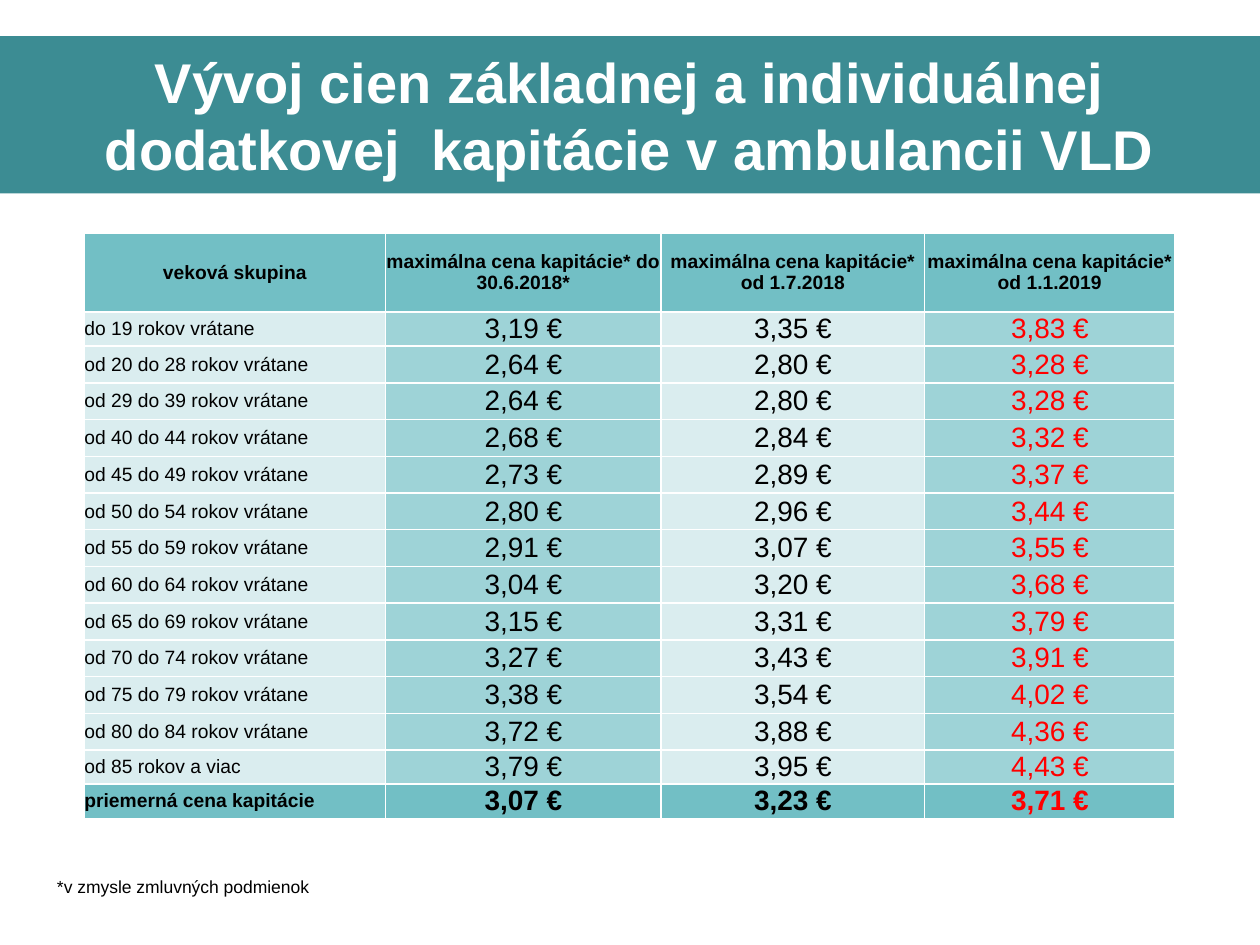
"""Build the slide on capitation prices by age group."""
from lxml import etree
from pptx import Presentation
from pptx.dml.color import RGBColor
from pptx.enum.text import MSO_ANCHOR, MSO_AUTO_SIZE, PP_ALIGN
from pptx.oxml.ns import qn
from pptx.util import Cm, Pt

LEFT, CENTER = PP_ALIGN.LEFT, PP_ALIGN.CENTER
MIDDLE = MSO_ANCHOR.MIDDLE
NO_FIT = MSO_AUTO_SIZE.NONE

TITLE = "Vývoj cien základnej a individuálnej dodatkovej  kapitácie v ambulancii VLD"
NOTE = "*v zmysle zmluvných podmienok"
HEAD = (
    "veková skupina",
    "maximálna cena kapitácie* do 30.6.2018*",
    "maximálna cena kapitácie* od 1.7.2018",
    "maximálna cena kapitácie* od 1.1.2019",
)
PRICES = [
    ("do 19 rokov vrátane", "3,19 €", "3,35 €", "3,83 €"),
    ("od 20 do 28 rokov vrátane", "2,64 €", "2,80 €", "3,28 €"),
    ("od 29 do 39 rokov vrátane", "2,64 €", "2,80 €", "3,28 €"),
    ("od 40 do 44 rokov vrátane", "2,68 €", "2,84 €", "3,32 €"),
    ("od 45 do 49 rokov vrátane", "2,73 €", "2,89 €", "3,37 €"),
    ("od 50 do 54 rokov vrátane", "2,80 €", "2,96 €", "3,44 €"),
    ("od 55 do 59 rokov vrátane", "2,91 €", "3,07 €", "3,55 €"),
    ("od 60 do 64 rokov vrátane", "3,04 €", "3,20 €", "3,68 €"),
    ("od 65 do 69 rokov vrátane", "3,15 €", "3,31 €", "3,79 €"),
    ("od 70 do 74 rokov vrátane", "3,27 €", "3,43 €", "3,91 €"),
    ("od 75 do 79 rokov vrátane", "3,38 €", "3,54 €", "4,02 €"),
    ("od 80 do 84 rokov vrátane", "3,72 €", "3,88 €", "4,36 €"),
    ("od 85 rokov a viac", "3,79 €", "3,95 €", "4,43 €"),
]
MEAN = ("priemerná cena kapitácie", "3,07 €", "3,23 €", "3,71 €")
ROWS = [HEAD, *PRICES, MEAN]

WIDTHS = (6.07, 5.56, 5.31, 5.05)
HEIGHTS = [1.59, 0.69] + [0.74] * 11 + [0.69] * 2

THEME = {
    "font": "Arial",
    "size": {"title": 32, "price": 16, "label": 11, "note": 10},
    "color": {
        "band": "3C8C93", "strong": "72BFC5", "mid": "9ED3D7",
        "pale": "DAEDEF", "white": "FFFFFF", "black": "000000", "red": "FF0000",
    },
}


def rgb(name):
    """Return a theme colour."""
    return RGBColor.from_string(THEME["color"][name])


def write(frame, text, size, color="black", bold=False, align=LEFT):
    """Fill the first paragraph of a frame with one run."""
    para = frame.paragraphs[0]
    para.alignment = align
    run = para.add_run()
    run.text = text
    font = run.font
    font.name = THEME["font"]
    font.size = Pt(THEME["size"][size])
    font.bold = bold
    font.color.rgb = rgb(color)


def edge(cell):
    """Draw a thin white border on every side of a cell."""
    props = cell._tc.get_or_add_tcPr()
    for side in ("a:lnL", "a:lnR", "a:lnT", "a:lnB"):
        line = etree.SubElement(props, qn(side), w=str(Pt(1)))
        fill = etree.SubElement(line, qn("a:solidFill"))
        etree.SubElement(fill, qn("a:srgbClr"), val=THEME["color"]["white"])


def add_prices(slide):
    """Add the price table."""
    frame = slide.shapes.add_table(
        len(ROWS), len(WIDTHS), Cm(1.7), Cm(4.7), Cm(sum(WIDTHS)), Cm(sum(HEIGHTS)))
    table = frame.table
    for col, width in zip(table.columns, WIDTHS):
        col.width = Cm(width)
    for row, height in zip(table.rows, HEIGHTS):
        row.height = Cm(height)
    for r, texts in enumerate(ROWS):
        head = r == 0
        strong = texts in (HEAD, MEAN)
        for c, text in enumerate(texts):
            cell = table.cell(r, c)
            cell.margin_left = cell.margin_right = 0
            cell.margin_top = cell.margin_bottom = 0
            cell.vertical_anchor = MIDDLE
            edge(cell)
            cell.fill.solid()
            cell.fill.fore_color.rgb = rgb("strong" if strong else ("pale", "mid")[c % 2])
            write(cell.text_frame, text,
                  "label" if head or c == 0 else "price",
                  "red" if c == 3 and not head else "black",
                  strong, CENTER if head or c else LEFT)


def add_title(slide):
    """Turn the title placeholder into a full-width band."""
    title = slide.shapes.title
    title.left, title.top, title.width, title.height = 0, Cm(0.73), Cm(25.4), Cm(3.17)
    title.fill.solid()
    title.fill.fore_color.rgb = rgb("band")
    frame = title.text_frame
    frame.word_wrap = True
    frame.auto_size = NO_FIT
    frame.vertical_anchor = MIDDLE
    write(frame, TITLE, "title", "white", True, CENTER)


def add_note(slide):
    """Add the footnote."""
    box = slide.shapes.add_textbox(Cm(0.9), Cm(17.53), Cm(6.6), Cm(0.68))
    box.text_frame.word_wrap = True
    write(box.text_frame, NOTE, "note")


def main():
    """Build and save the deck."""
    deck = Presentation()
    deck.slide_width, deck.slide_height = Cm(25.4), Cm(19.05)
    slide = deck.slides.add_slide(deck.slide_layouts[5])
    add_prices(slide)
    add_title(slide)
    add_note(slide)
    deck.save("out.pptx")


if __name__ == "__main__":
    main()
